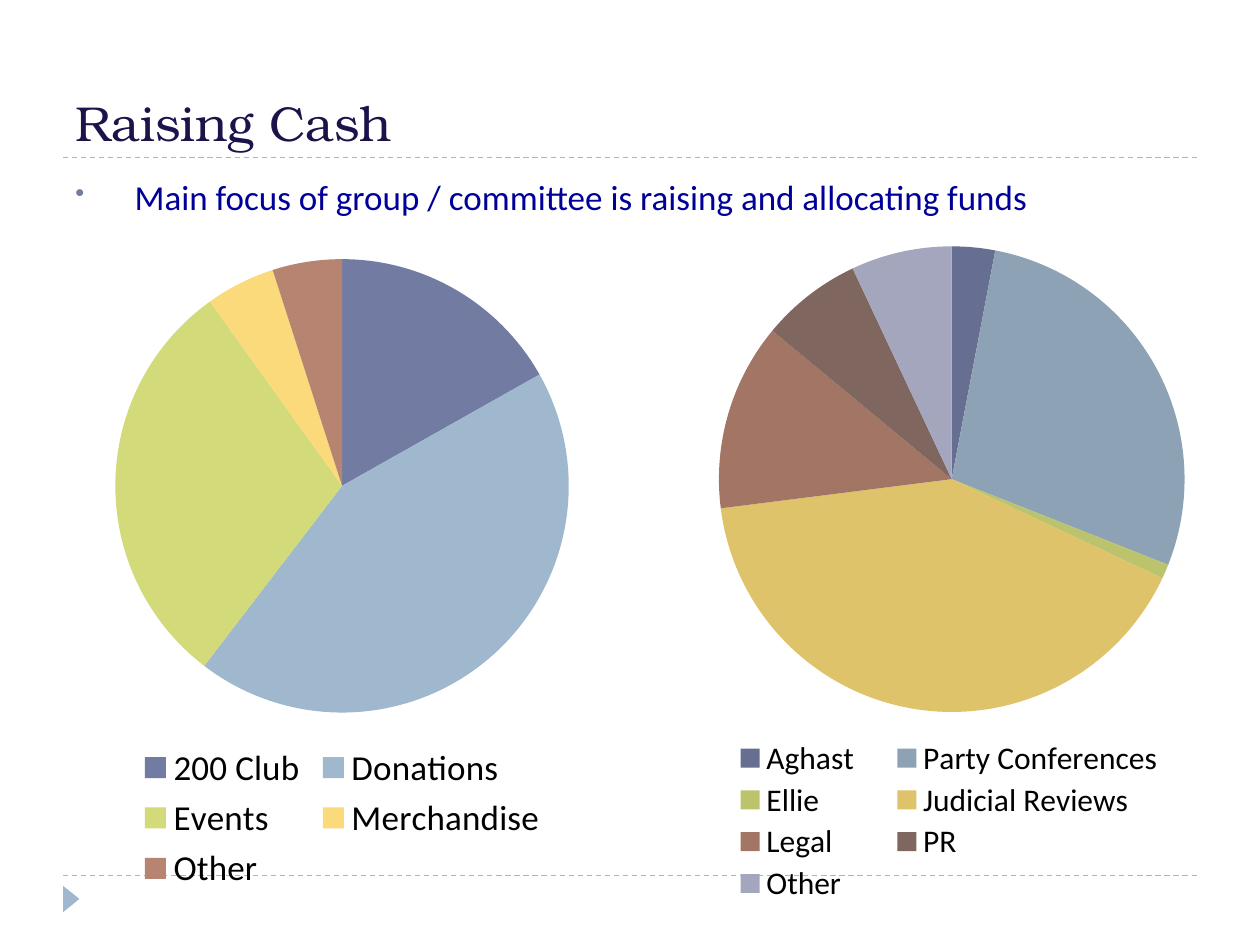
from dataclasses import dataclass
from typing import Optional

from lxml.etree import SubElement
from pptx import Presentation
from pptx.chart.data import CategoryChartData
from pptx.dml.color import RGBColor as RGB
from pptx.enum.chart import XL_CHART_TYPE as ChartType, XL_LEGEND_POSITION as LegendPos
from pptx.enum.dml import MSO_LINE_DASH_STYLE as Dash
from pptx.enum.shapes import MSO_CONNECTOR as Connector, MSO_SHAPE as Shape
from pptx.enum.text import MSO_ANCHOR as Anchor, MSO_AUTO_SIZE as AutoSize, PP_ALIGN as Align
from pptx.oxml import parse_xml
from pptx.oxml.ns import nsdecls, qn
from pptx.util import Inches, Pt

Box = tuple[float, float, float, float]


@dataclass(frozen=True)
class Theme:
    title_font: str = "TeX Gyre Bonum"
    body_font: str = "Calibri"
    title: str = "1B1349"
    body: str = "000099"
    black: str = "000000"
    accent: str = "9FB8CD"
    bullet: str = "727CA3"
    title_size: int = 28
    body_size: int = 20
    chart_size: int = 10
    income_legend_size: int = 20
    spending_legend_size: int = 18
    income: tuple[str, ...] = ("727CA3", "9FB8CD", "D2DA7A", "FADA7A", "B88472")
    spending: tuple[str, ...] = ("666E91", "8DA3B5", "BBC36D", "DFC36B",
                                 "A27564", "7F665E", "A3A6BD")


@dataclass(frozen=True)
class Pie:
    box: Box
    plot: Box  # fractions of the chart
    legend_size: int
    slices: dict[str, int]
    colors: tuple[str, ...]
    legend: Optional[Box] = None  # fractions of the chart; automatic if None


THEME = Theme()
MARGIN, CONTENT_W = 0.5, 9
RULES_Y = (1.25, 6.95)
PIES = (
    Pie((0.67, 1.94, 4.09, 5.18), (0.06, 0.02, 0.88, 0.7), THEME.income_legend_size,
        {"200 Club": 17, "Donations": 44, "Events": 30, "Merchandise": 5, "Other": 5},
        THEME.income),
    Pie((5.31, 1.6, 4.4, 5.65), (0.09, 0.06, 0.84, 0.66), THEME.spending_legend_size,
        {"Aghast": 3, "Party Conferences": 28, "Ellie": 1, "Judicial Reviews": 41,
         "Legal": 13, "PR": 7, "Other": 7},
        THEME.spending, legend=(0.07, 0.75, 0.87, 0.24)),
)


def set_font(font, name: str, size: int, color: str) -> None:
    for key, value in {"name": name, "size": Pt(size), "bold": False}.items():
        setattr(font, key, value)
    font.color.rgb = RGB.from_string(color)


def add_rule(slide, y: float) -> None:
    line = slide.shapes.add_connector(Connector.STRAIGHT, Inches(MARGIN), Inches(y),
                                      Inches(MARGIN + CONTENT_W), Inches(y))
    line.line.color.rgb = RGB.from_string(THEME.accent)
    line.line.width = Pt(0.75)
    line.line.dash_style = Dash.DASH
    SubElement(line._element.spPr, qn("a:effectLst"))


def add_marker(slide) -> None:
    sp = slide.shapes.add_shape(Shape.ISOSCELES_TRIANGLE, Inches(0.46), Inches(7.07),
                                Inches(0.21), Inches(0.13))
    sp.rotation = 90
    sp.shadow.inherit = False
    sp.fill.solid()
    sp.fill.fore_color.rgb = RGB.from_string(THEME.accent)
    sp.line.fill.background()


def set_title(slide, text: str) -> None:
    sp = slide.shapes.title
    frame = {"left": MARGIN, "top": 0.17, "width": CONTENT_W, "height": 1.08}
    for key, value in frame.items():
        setattr(sp, key, Inches(value))
    tf = sp.text_frame
    tf.text = text
    for key, value in {"vertical_anchor": Anchor.BOTTOM, "word_wrap": True,
                       "auto_size": AutoSize.NONE}.items():
        setattr(tf, key, value)
    p = tf.paragraphs[0]
    p.alignment = Align.LEFT
    set_font(p.runs[0].font, THEME.title_font, THEME.title_size, THEME.title)


def add_bullet(slide, text: str) -> None:
    sp = slide.shapes.add_textbox(Inches(MARGIN), Inches(1.34), Inches(CONTENT_W), Inches(0.5))
    tf = sp.text_frame
    tf.word_wrap = True
    p = tf.paragraphs[0]
    pPr = p._p.get_or_add_pPr()
    indent = Inches(0.47)
    pPr.set("marL", str(indent))
    pPr.set("indent", str(-indent))
    for tag in (f'<a:buClr {nsdecls("a")}><a:srgbClr val="{THEME.bullet}"/></a:buClr>',
                f'<a:buSzPct {nsdecls("a")} val="76000"/>',
                f'<a:buChar {nsdecls("a")} char="•"/>'):
        pPr.append(parse_xml(tag))
    r = p.add_run()
    r.text = text
    set_font(r.font, THEME.body_font, THEME.body_size, THEME.body)


def place(part, index: int, box: Box, target: Optional[str] = None) -> None:
    """Fix a chart part at a box, putting its layout at the given child index."""
    for old in part.findall(qn("c:layout")):
        part.remove(old)
    settings = {"layoutTarget": target} if target else {}
    settings |= {"xMode": "edge", "yMode": "edge", **dict(zip("xywh", box))}
    items = "".join(f'<c:{key} val="{value}"/>' for key, value in settings.items())
    part.insert(index, parse_xml(f'<c:layout {nsdecls("c")}><c:manualLayout>{items}'
                                 '</c:manualLayout></c:layout>'))


def add_pie(slide, pie: Pie) -> None:
    data = CategoryChartData()
    data.categories = list(pie.slices)
    data.add_series("Series 1", list(pie.slices.values()))
    chart = slide.shapes.add_chart(ChartType.PIE, *map(Inches, pie.box), data).chart
    set_font(chart.font, THEME.body_font, THEME.chart_size, THEME.black)
    chart.has_title = False
    chart.has_legend = True
    chart.legend.position = LegendPos.BOTTOM
    chart.legend.include_in_layout = False
    set_font(chart.legend.font, THEME.body_font, pie.legend_size, THEME.black)

    # Slice colours
    plot = chart.plots[0]
    plot.vary_by_categories = True
    for i, color in enumerate(pie.colors):
        fmt = plot.series[0].points[i].format
        fmt.fill.solid()
        fmt.fill.fore_color.rgb = RGB.from_string(color)
        fmt.line.fill.background()

    # Fixed plot area and legend grid
    root = chart._chartSpace.chart
    place(root.plotArea, 0, pie.plot, "inner")
    if pie.legend:
        place(root.find(qn("c:legend")), 1, pie.legend)


def main() -> None:
    prs = Presentation()
    prs.slide_width, prs.slide_height = Inches(10), Inches(7.5)
    slide = prs.slides.add_slide(prs.slide_layouts[5])

    # Page furniture
    for y in RULES_Y:
        add_rule(slide, y)
    add_marker(slide)

    # Text
    set_title(slide, "Raising Cash")
    add_bullet(slide, "Main focus of group / committee is raising and allocating funds")

    # Income on the left, spending on the right
    for pie in PIES:
        add_pie(slide, pie)
    prs.save("out.pptx")


if __name__ == "__main__":
    main()
